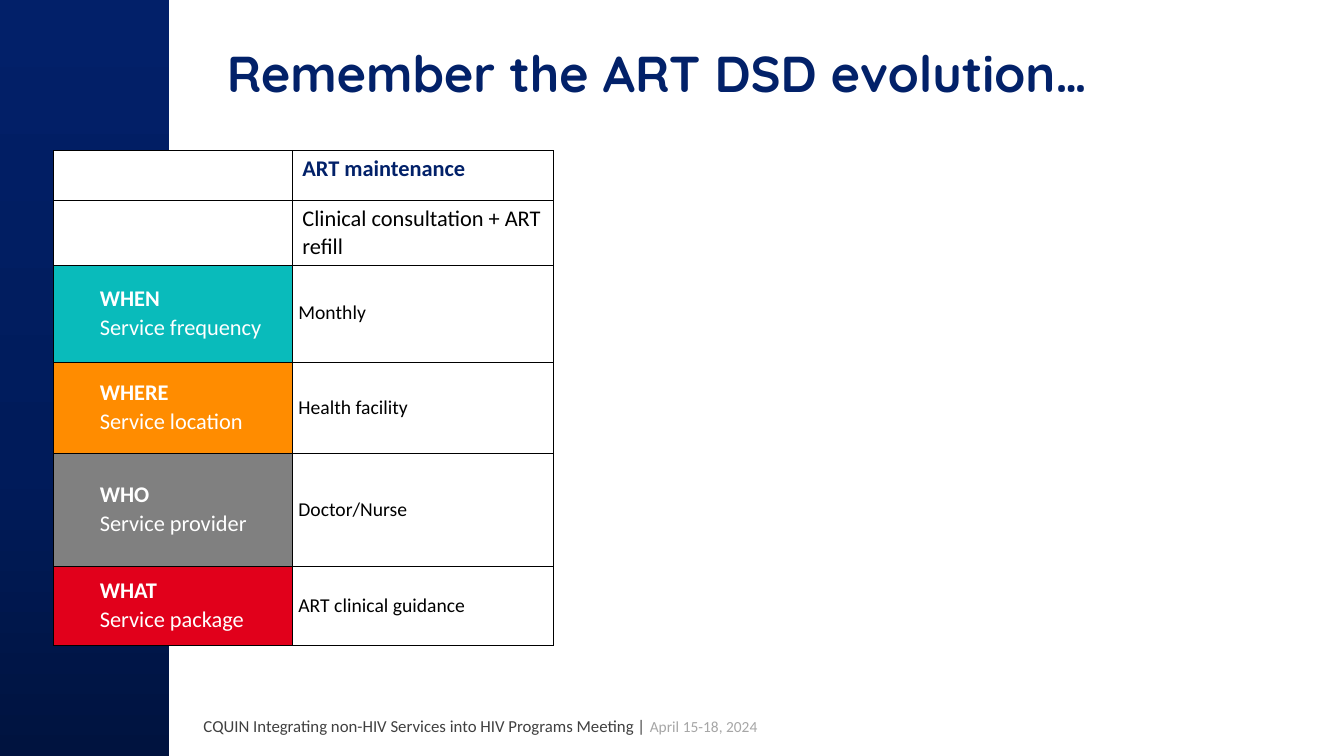
import copy
import pptx
import pptx.util
import pptx.dml.color
import pptx.enum.shapes
import pptx.enum.text
import pptx.oxml

Inches = pptx.util.Inches
Pt = pptx.util.Pt
ANCHOR = pptx.enum.text.MSO_ANCHOR
NS = "http://schemas.openxmlformats.org/drawingml/2006/main"
HUES = {
    "deep": "00133F", "mid": "001B5A", "blue": "022069", "navy": "022169",
    "teal": "09BBBB", "orange": "FF8C00", "gray": "808080", "red": "E1001B",
    "white": "FFFFFF", "black": "000000", "dark": "404040", "pale": "A6A6A6",
}


def rgb(name):
    return pptx.dml.color.RGBColor.from_string(HUES[name])


def style(font, size, hue, bold=False, face="Calibri"):
    font.name, font.size, font.bold = face, Pt(size), bold
    font.color.rgb = rgb(hue)


deck = pptx.Presentation()
deck.slide_width, deck.slide_height = Inches(13.33), Inches(7.5)
slide = deck.slides.add_slide(deck.slide_layouts[5])
shapes = slide.shapes

# Side band with a vertical gradient, darkest at the bottom
band = shapes.add_shape(pptx.enum.shapes.MSO_SHAPE.RECTANGLE,
                        0, 0, Inches(1.68), Inches(7.5))
band.shadow.inherit = False
band.line.fill.background()
band.fill.gradient()
band.fill.gradient_angle = 90
first = band.fill._fill._gradFill.gsLst[0]
first.addnext(copy.deepcopy(first))
for stop, (place, hue) in zip(band.fill.gradient_stops,
                              [(0, "deep"), (0.38, "mid"), (1, "blue")]):
    stop.position = place
    stop.color.rgb = rgb(hue)

# Title
title = shapes.title
title.left, title.top = Inches(2.15), Inches(0.37)
title.width, title.height = Inches(10), Inches(0.92)
frame = title.text_frame
frame.text = "Remember the ART DSD evolution…"
frame.vertical_anchor = ANCHOR.TOP
frame.auto_size = pptx.enum.text.MSO_AUTO_SIZE.NONE
frame.paragraphs[0].alignment = pptx.enum.text.PP_ALIGN.LEFT
style(frame.paragraphs[0].font, 36, "navy", True, "Quicksand")

# Footer
foot = shapes.add_textbox(Inches(1.92), Inches(7), Inches(6.9), Inches(0.4))
frame = foot.text_frame
frame.word_wrap = True
frame.vertical_anchor = ANCHOR.MIDDLE
for text, size, hue in [
    ("CQUIN Integrating non-HIV Services into HIV Programs Meeting | ", 12, "dark"),
    ("April 15-18, 2024", 11, "pale"),
]:
    run = frame.paragraphs[0].add_run()
    run.text = text
    style(run.font, size, hue)

# Table: height, label fill, label lines, value
rows = [
    (0.5, "white", "", "ART maintenance"),
    (0.64, "white", "", "Clinical consultation + ART refill"),
    (0.96, "teal", "WHEN\nService frequency", "Monthly"),
    (0.91, "orange", "WHERE\nService location", "Health facility"),
    (1.12, "gray", "WHO\nService provider", "Doctor/Nurse"),
    (0.78, "red", "WHAT\nService package", "ART clinical guidance"),
]
table = shapes.add_table(len(rows), 2, Inches(0.53), Inches(1.49),
                         Inches(4.96), Inches(4.91)).table
table.first_row = table.horz_banding = False
table.columns[0].width, table.columns[1].width = Inches(2.37), Inches(2.59)

for r, (height, hue, label, value) in enumerate(rows):
    table.rows[r].height = Inches(height)
    for c, (fill, text) in enumerate([(hue, label), ("white", value)]):
        cell = table.cell(r, c)
        cell.text = text
        cell.fill.solid()
        cell.fill.fore_color.rgb = rgb(fill)
        props = cell._tc.get_or_add_tcPr()
        for i, side in enumerate("LRTB"):
            props.insert(i, pptx.oxml.parse_xml(
                f'<a:ln{side} xmlns:a="{NS}" w="{Pt(0.25)}"><a:solidFill>'
                f'<a:srgbClr val="{HUES["black"]}"/></a:solidFill></a:ln{side}>'))
        if r > 1:
            cell.vertical_anchor = ANCHOR.MIDDLE
            cell.margin_left = cell.margin_bottom = Inches(0.06)
            cell.margin_right = cell.margin_top = Inches(0.04)
        for n, para in enumerate(cell.text_frame.paragraphs):
            if r > 1:
                para.line_spacing = 1.05
            if c == 0:
                para._p.get_or_add_pPr().set("marL", str(Inches(0.4)))
                style(para.font, 16, "white", n == 0)
            elif r == 0:
                style(para.font, 16, "navy", True)
            else:
                style(para.font, 16 if r == 1 else 14, "black")

deck.save("out.pptx")
